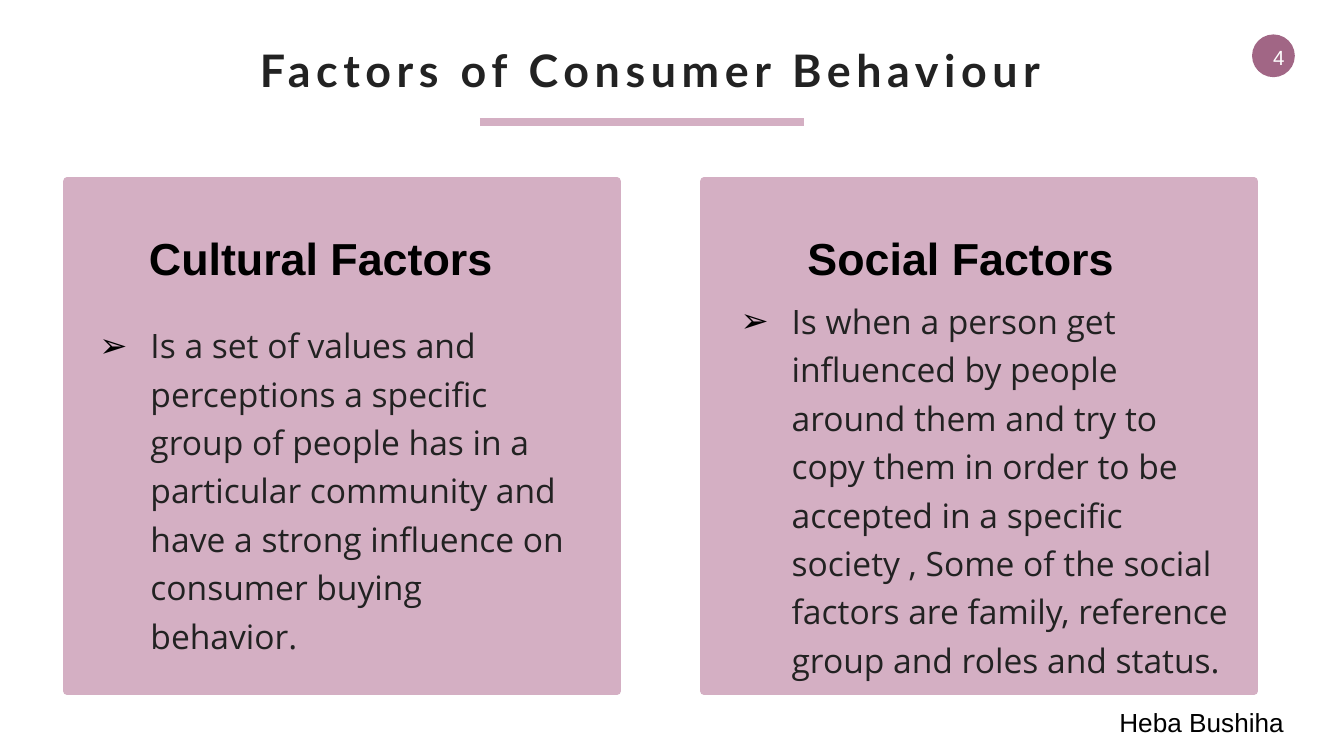
from lxml.etree import SubElement
from pptx import Presentation
from pptx.dml.color import RGBColor
from pptx.enum.shapes import MSO_CONNECTOR, MSO_SHAPE
from pptx.enum.text import MSO_ANCHOR, MSO_AUTO_SIZE, PP_ALIGN
from pptx.oxml.ns import qn
from pptx.util import Inches, Pt

PINK, PLUM, INK, BLACK, WHITE = "D4AFC3", "A16685", "222222", "000000", "FFFFFF"
CULTURAL = ("Is a set of values and perceptions a specific group of people has in a "
            "particular community and have a strong influence on consumer buying behavior.")
SOCIAL = ("Is when a person get influenced by people around them and try to copy them "
          "in order to be accepted in a specific society , Some of the social factors "
          "are family, reference group and roles and status.")


def colour(value):
    """Turn a hex string into a colour."""
    return RGBColor.from_string(value)


def write(frame, text, size=14, font="Arial", ink=BLACK, bold=False,
          align=PP_ALIGN.LEFT, spacing=None):
    """Write formatted text into the first paragraph of a frame and return it."""
    para = frame.paragraphs[0]
    para.alignment = align
    span = para.add_run()
    span.text = text
    span.font.size = Pt(size)
    span.font.name = font
    span.font.bold = bold
    span.font.color.rgb = colour(ink)
    if spacing:
        span.font._element.set("spc", str(spacing * 100))
    return para


class FactorsPage:
    """Hold the page and draw its elements in one style."""

    def __init__(self, deck):
        """Add a blank page to the deck."""
        self.page = deck.slides.add_slide(deck.slide_layouts[6])

    def shape(self, kind, left, top, width, height, fill, line):
        """Draw a filled preset shape."""
        shape = self.page.shapes.add_shape(
            kind, Inches(left), Inches(top), Inches(width), Inches(height))
        shape.shadow.inherit = False
        shape.fill.solid()
        shape.fill.fore_color.rgb = colour(fill)
        shape.line.color.rgb = colour(fill)
        shape.line.width = Pt(line)
        return shape

    def text(self, left, top, width, height, text, side=0.1, inset=0.05, **style):
        """Draw a wrapped text box and return its paragraph."""
        box = self.page.shapes.add_textbox(
            Inches(left), Inches(top), Inches(width), Inches(height))
        frame = box.text_frame
        frame.word_wrap = True
        frame.auto_size = MSO_AUTO_SIZE.NONE
        frame.margin_left = frame.margin_right = Inches(side)
        frame.margin_top = Inches(inset)
        return write(frame, text, **style)

    def bullet(self, left, top, width, height, text):
        """Draw a body text with an arrowhead bullet."""
        para = self.text(left, top, width, height, text, side=0.09, inset=0.04,
                         size=18, font="Open Sans", ink=INK)
        para.line_spacing = 1.2
        para.space_before = Pt(3.6)
        properties = para._p.get_or_add_pPr()
        properties.set("marL", str(Inches(0.38)))
        properties.set("indent", str(-Inches(0.38)))
        tint = SubElement(properties, qn("a:buClr"))
        SubElement(tint, qn("a:srgbClr"), val=BLACK)
        SubElement(properties, qn("a:buFont"), typeface="Arial")
        SubElement(properties, qn("a:buChar"), char="➢")

    def rule(self, start, end, top):
        """Draw a horizontal rule."""
        line = self.page.shapes.add_connector(
            MSO_CONNECTOR.STRAIGHT, Inches(start), Inches(top), Inches(end), Inches(top))
        line.line.color.rgb = colour(PINK)
        line.line.width = Pt(4.5)
        SubElement(line._element.spPr, qn("a:effectLst"))

    def badge(self, number):
        """Draw the round page number."""
        badge = self.shape(MSO_SHAPE.OVAL, 9.33, 0.27, 0.29, 0.29, PLUM, 2)
        frame = badge.text_frame
        frame.word_wrap = False
        frame.vertical_anchor = MSO_ANCHOR.MIDDLE
        frame.margin_left = Inches(0.08)
        frame.margin_top = Inches(0.02)
        frame.margin_right = frame.margin_bottom = 0
        write(frame, number, size=11, ink=WHITE, align=PP_ALIGN.CENTER)

    def card(self, left, heading_left, heading, body_area, body):
        """Draw a panel with its heading and body."""
        self.shape(MSO_SHAPE.RECTANGLE, left, 1.35, 4.09, 3.79, PINK, 4.5)
        self.text(heading_left, 1.34, 3.76, 1.08, heading, inset=0.38,
                  size=24, bold=True, align=PP_ALIGN.JUSTIFY)
        self.bullet(*body_area, body)


def main():
    """Build the deck and save it."""
    deck = Presentation()
    deck.slide_width = Inches(10)
    deck.slide_height = Inches(10 * 9 / 16)
    page = FactorsPage(deck)
    page.rule(3.57, 5.98, 0.91)
    page.text(1.71, 0.27, 6.26, 1.01, "Factors of Consumer Behaviour", size=24,
              font="Lato", ink=INK, bold=True, align=PP_ALIGN.CENTER, spacing=3)
    page.badge("4")
    page.card(0.5, 1.01, "Cultural Factors", (0.65, 2.32, 3.66, 2.25), CULTURAL)
    page.card(5.24, 5.91, "Social Factors", (5.42, 2.14, 3.89, 2.97), SOCIAL)
    page.text(8.23, 5.21, 1.98, 0.34, "Heba Bushiha")
    deck.save("out.pptx")


if __name__ == "__main__":
    main()
